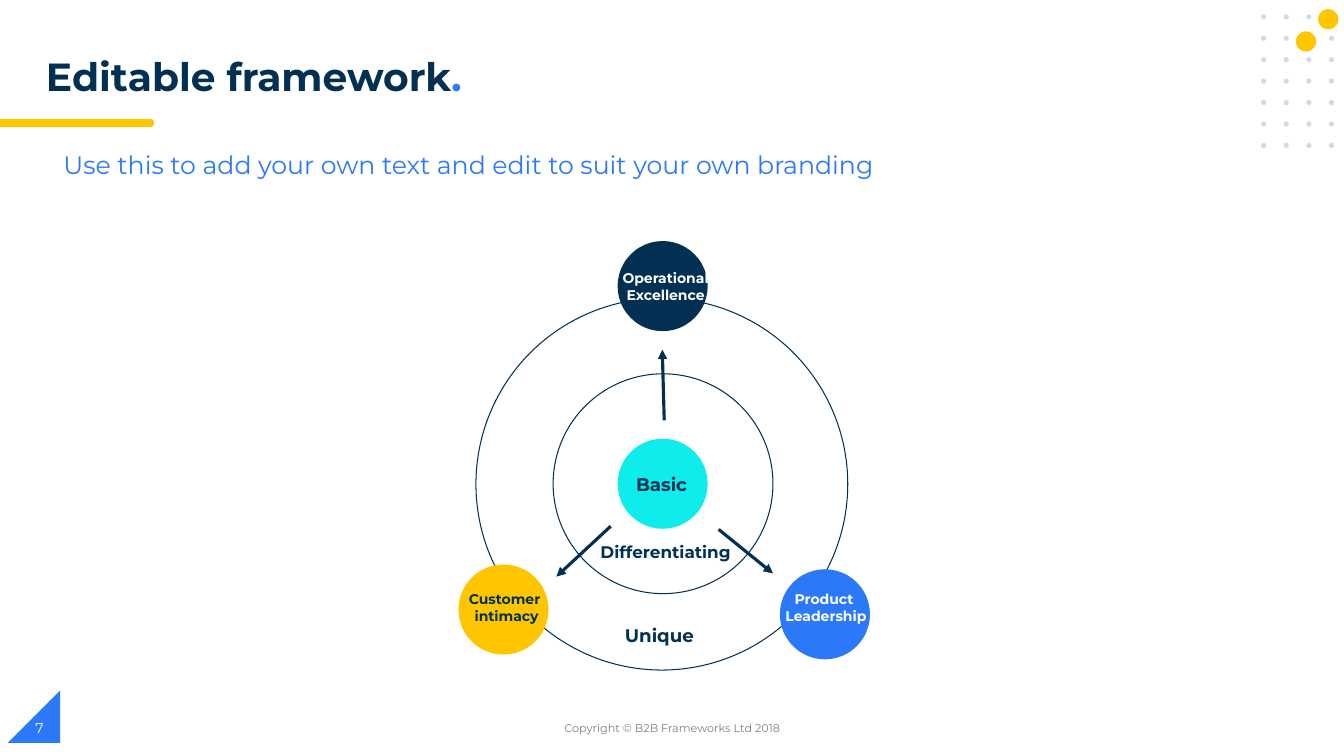
from itertools import product

from lxml import etree
from pptx import Presentation
from pptx.dml.color import RGBColor
from pptx.enum import shapes, text
from pptx.oxml.ns import qn
from pptx.util import Cm, Pt

NAVY = RGBColor(0x02, 0x30, 0x53)
INK = RGBColor(0x02, 0x31, 0x54)
BLUE = RGBColor(0x2B, 0x79, 0xF8)
GOLD = RGBColor(0xFF, 0xC6, 0x00)
CYAN = RGBColor(0x0E, 0xEC, 0xEC)
PALE = RGBColor(0xD1, 0xDB, 0xE0)
GREY = RGBColor(0x7F, 0x7F, 0x7F)
WHITE = RGBColor(0xFF, 0xFF, 0xFF)

FONT = "Montserrat"
KIND = shapes.MSO_SHAPE
ALIGN = text.PP_ALIGN

TITLE = [("Editable framework", NAVY), (".", BLUE)]
HINT = "Use this to add your own text and edit to suit your own branding"
RIGHTS = "Copyright © B2B Frameworks Ltd 2018"
PAGE = "7"

# Lengths in centimetres: centre x, centre y, diameter
DISC = 2.27
DISCS = [(16.7, 12.19, CYAN), (16.7, 7.21, NAVY),
         (12.69, 15.36, GOLD), (20.79, 15.48, BLUE)]
RINGS = [(16.71, 12.19, 5.54), (16.68, 12.2, 9.37)]
ARROWS = [(16.74, 10.59, 16.69, 8.81),
          (18.11, 13.34, 19.48, 14.45),
          (15.39, 13.26, 14.02, 14.53)]

# Text, box, size, centred
LEVELS = [("Basic", (16, 11.89, 1.5, 0.58), 13, False),
          ("Differentiating", (14.73, 13.61, 4.06, 0.53), 12, True),
          ("Unique", (15.72, 15.7, 2.03, 0.58), 13, False)]
# Paragraphs, left, top, colour
GOALS = [(["Customer intimacy"], 11.33, 14.86, INK),
         (["Product Leadership"], 19.38, 14.86, WHITE),
         (["Operational", "Excellence"], 15.39, 6.76, WHITE)]

# Dot grid: left, top, column step, row step, dot size
COLS, ROWS = 4, 7
GRID = (31.78, 0.36, 0.57, 0.54, 0.13)
SPOTS = [(33.22, 0.23), (32.66, 0.79)]

deck = Presentation()
deck.slide_width, deck.slide_height = Cm(33.87), Cm(19.05)
slide = deck.slides.add_slide(deck.slide_layouts[6])


def add_form(kind, box, fill=None, line=None):
    form = slide.shapes.add_shape(kind, *map(Cm, box))
    form.shadow.inherit = False
    if fill is None:
        form.fill.background()
    else:
        form.fill.solid()
        form.fill.fore_color.rgb = fill
    if line is None:
        form.line.fill.background()
    else:
        form.line.color.rgb = line
        form.line.width = Pt(0.75)
    return form


def add_disc(x, y, size, **look):
    """Add a circle around the centre x, y."""
    add_form(KIND.OVAL, (x - size / 2, y - size / 2, size, size), **look)


def add_text(paras, box, size, color=INK, bold=False, align=ALIGN.LEFT,
             middle=False, tight=False, indent=None, spacing=None):
    """Each paragraph is a string or a list of (string, colour) runs."""
    frame = slide.shapes.add_textbox(*map(Cm, box)).text_frame
    frame.word_wrap = True
    if middle:
        frame.vertical_anchor = text.MSO_ANCHOR.MIDDLE
    if tight:
        frame.margin_left = frame.margin_right = frame.margin_bottom = 0
        frame.margin_top = Cm(0.03)
    for i, runs in enumerate(paras):
        para = frame.add_paragraph() if i else frame.paragraphs[0]
        para.alignment = align
        if spacing:
            para.line_spacing = spacing
        if indent:
            props = para._p.get_or_add_pPr()
            props.set("marL", str(Cm(indent[0])))
            props.set("indent", str(Cm(indent[1])))
        for words, tint in [(runs, color)] if isinstance(runs, str) else runs:
            run = para.add_run()
            run.text = words
            font = run.font
            font.name, font.size, font.bold = FONT, Pt(size), bold
            font.color.rgb = tint


def add_arrow(*ends):
    arrow = slide.shapes.add_connector(
        shapes.MSO_CONNECTOR.STRAIGHT, *map(Cm, ends))
    arrow.line.color.rgb = NAVY
    arrow.line.width = Pt(2.25)
    etree.SubElement(arrow.line._get_or_add_ln(), qn("a:tailEnd"),
                     type="triangle")
    etree.SubElement(arrow._element.spPr, qn("a:effectLst"))


# Page furniture
corner = add_form(KIND.RIGHT_TRIANGLE, (0.2, 17.4, 1.32, 1.32), fill=BLUE)
corner._element.spPr.xfrm.set("flipH", "1")
for top in (3, 3.05):
    add_form(KIND.FLOWCHART_TERMINATOR, (3.4, top, 0.48, 0.15), fill=GOLD)
    add_form(KIND.RECTANGLE, (0, top, 3.58, 0.15), fill=GOLD)
left, top, across, down, dot = GRID
for row, col in product(range(ROWS), range(COLS)):
    add_form(KIND.OVAL, (left + col * across, top + row * down, dot, dot),
             fill=PALE)
for x, y in SPOTS:
    add_form(KIND.OVAL, (x, y, 0.51, 0.51), fill=GOLD)

add_text([TITLE], (0.91, 1.32, 14.33, 1.52), 28, bold=True, spacing=0.9)
add_text([RIGHTS], (11.23, 17.83, 11.43, 1.02), 8, color=GREY,
         align=ALIGN.CENTER, middle=True)
add_text([PAGE], (0.64, 17.83, 7.62, 1.02), 10, color=WHITE, middle=True)
add_text([HINT], (1.35, 3.63, 21.82, 1.22), 18, color=BLUE)

# Framework
for x, y, size in RINGS:
    add_disc(x, y, size, line=NAVY)
for x, y, fill in DISCS:
    add_disc(x, y, DISC, fill=fill)
for ends in ARROWS:
    add_arrow(*ends)
for words, box, size, center in LEVELS:
    add_text([words], box, size, bold=True, tight=True, indent=(0.03, 0),
             align=ALIGN.CENTER if center else ALIGN.LEFT)
for paras, x, y, color in GOALS:
    add_text(paras, (x, y, 2.72, 0.89), 10, color=color, bold=True,
             align=ALIGN.CENTER, tight=True, indent=(0.15, -0.1))

deck.save("out.pptx")
